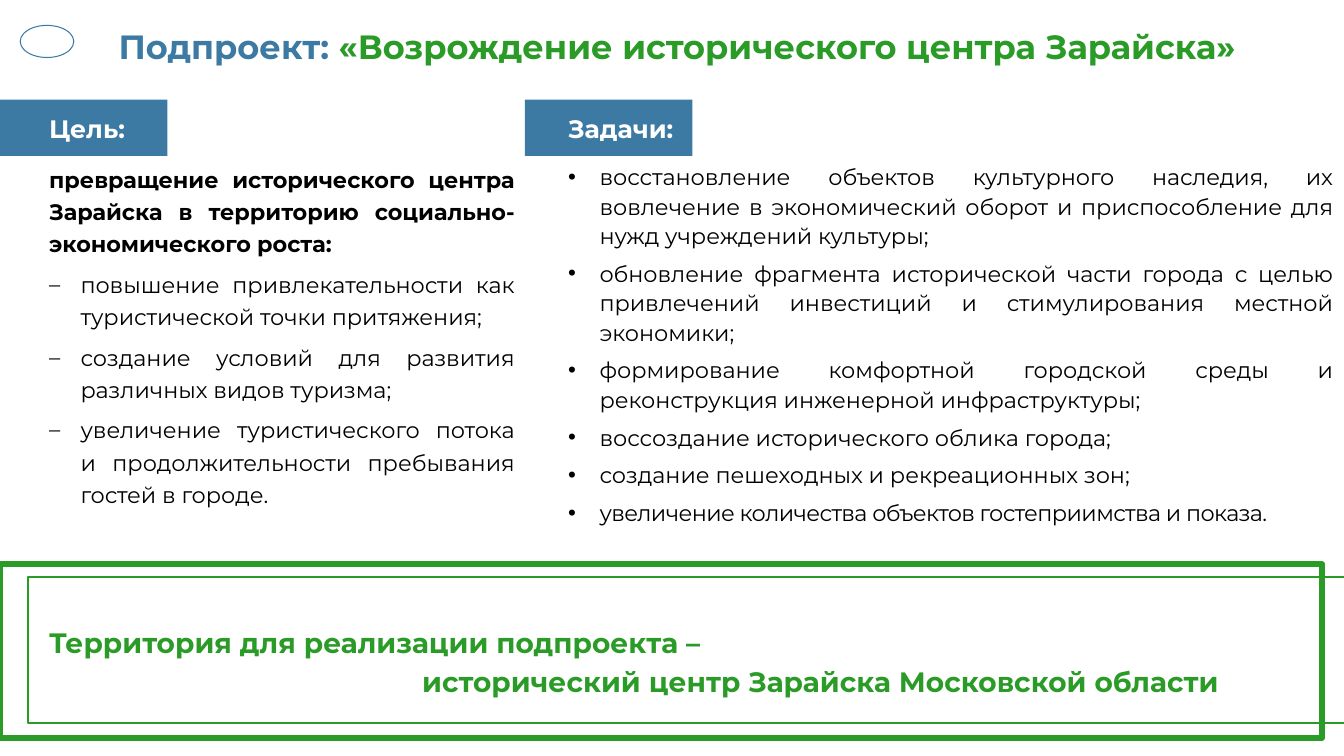
from lxml import etree
from pptx import Presentation
from pptx.dml.color import RGBColor
from pptx.enum import shapes, text
from pptx.oxml import ns
from pptx.util import Cm, Pt

BLUE = RGBColor(0x3C, 0x7A, 0xA3)
GREEN = RGBColor(0x2A, 0x9B, 0x27)
WHITE = RGBColor(0xFF, 0xFF, 0xFF)
BLACK = RGBColor(0, 0, 0)
FONT = "Montserrat"
HANGING = Cm(0.79)

presentation = Presentation()
presentation.slide_width, presentation.slide_height = Cm(33.87), Cm(19.05)
slide = presentation.slides.add_slide(presentation.slide_layouts[6])


def add_frame(left, top, width, height):
    frame = slide.shapes.add_textbox(Cm(left), Cm(top), Cm(width), Cm(height)).text_frame
    frame.word_wrap = True
    return frame


def write(paragraph, words, size, color, bold=True, **layout):
    """Add a run to the paragraph and apply paragraph settings."""
    for setting, value in layout.items():
        setattr(paragraph, setting, value)
    run = paragraph.add_run()
    run.text = words
    for setting, value in dict(name=FONT, size=Pt(size), bold=bold).items():
        setattr(run.font, setting, value)
    run.font.color.rgb = color
    return run


# Heading bars
for left in (13.23, 0):
    bar = slide.shapes.add_shape(shapes.MSO_SHAPE.RECTANGLE, Cm(left), Cm(2.51), Cm(4.22), Cm(1.42))
    bar.shadow.inherit = False
    bar.fill.solid()
    bar.fill.fore_color.rgb = BLUE
    bar.line.fill.background()

# Title
title = add_frame(2.74, 0.41, 30.5, 1.63)
title.vertical_anchor = text.MSO_ANCHOR.MIDDLE
write(title.paragraphs[0], "Подпроект: ", 24, BLUE, line_spacing=0.9)
write(title.paragraphs[0], "«Возрождение исторического центра Зарайска»", 24, GREEN)

# Outlines: emblem, then the two frames around the territory
for preset, left, top, width, height, color, weight in (
    (shapes.MSO_SHAPE.OVAL, 0.51, 0.64, 1.35, 0.81, BLUE, 0.75),
    (shapes.MSO_SHAPE.RECTANGLE, 0, 14.22, 33.32, 4.37, GREEN, 4.5),
    (shapes.MSO_SHAPE.RECTANGLE, 0.71, 14.55, 33.53, 3.68, GREEN, 1.5),
):
    outline = slide.shapes.add_shape(preset, Cm(left), Cm(top), Cm(width), Cm(height))
    outline.shadow.inherit = False
    outline.fill.background()
    outline.line.color.rgb = color
    outline.line.width = Pt(weight)

# Goal and tasks
goal = (
    "повышение привлекательности как туристической точки притяжения;",
    "создание условий для развития различных видов туризма;",
    "увеличение туристического потока и продолжительности пребывания гостей в городе.",
)
tasks = (
    "восстановление объектов культурного наследия, их вовлечение в экономический оборот "
    "и приспособление для нужд учреждений культуры;",
    "обновление фрагмента исторической части города с целью привлечений инвестиций "
    "и стимулирования местной экономики;",
    "формирование комфортной городской среды и реконструкция инженерной инфраструктуры;",
    "воссоздание исторического облика города;",
    "создание пешеходных и рекреационных зон;",
    "увеличение количества объектов гостеприимства и показа.",
)
for left, width, height, heading, lead, items, mark, mark_font, spacing in (
    (0.99, 12.24, 11.05, "Цель:",
     "превращение исторического центра Зарайска в территорию социально-экономического роста:",
     goal, "–", FONT, 23),
    (14.07, 19.79, 10.69, "Задачи:", None, tasks, "•", "Arial", 21),
):
    column = add_frame(left, 2.74, width, height)
    justified = dict(alignment=text.PP_ALIGN.JUSTIFY, space_after=Pt(6), line_spacing=Pt(spacing))
    write(column.paragraphs[0], heading, 18, WHITE,
          alignment=text.PP_ALIGN.JUSTIFY, space_after=Pt(12))
    if lead:
        write(column.add_paragraph(), lead, 16, BLACK, **justified)
    for item in items:
        paragraph = column.add_paragraph()
        properties = paragraph._p.get_or_add_pPr()
        properties.set("marL", str(HANGING))
        properties.set("indent", str(-HANGING))
        etree.SubElement(properties, ns.qn("a:buFont"), typeface=mark_font)
        etree.SubElement(properties, ns.qn("a:buChar"), char=mark)
        run = write(paragraph, item, 16, BLACK, bold=False, **justified)
        if item == tasks[-1]:
            run.font._element.set("spc", "-40")

# Territory
territory = add_frame(0.99, 15.49, 31.78, 2.16)
write(territory.paragraphs[0], "Территория для реализации подпроекта –", 20, GREEN,
      line_spacing=Pt(28))
place = territory.add_paragraph()
place._p.get_or_add_pPr().set("marL", str(Cm(9.4)))
write(place, "исторический центр Зарайска Московской области", 20, GREEN, line_spacing=Pt(28))

presentation.save("out.pptx")
